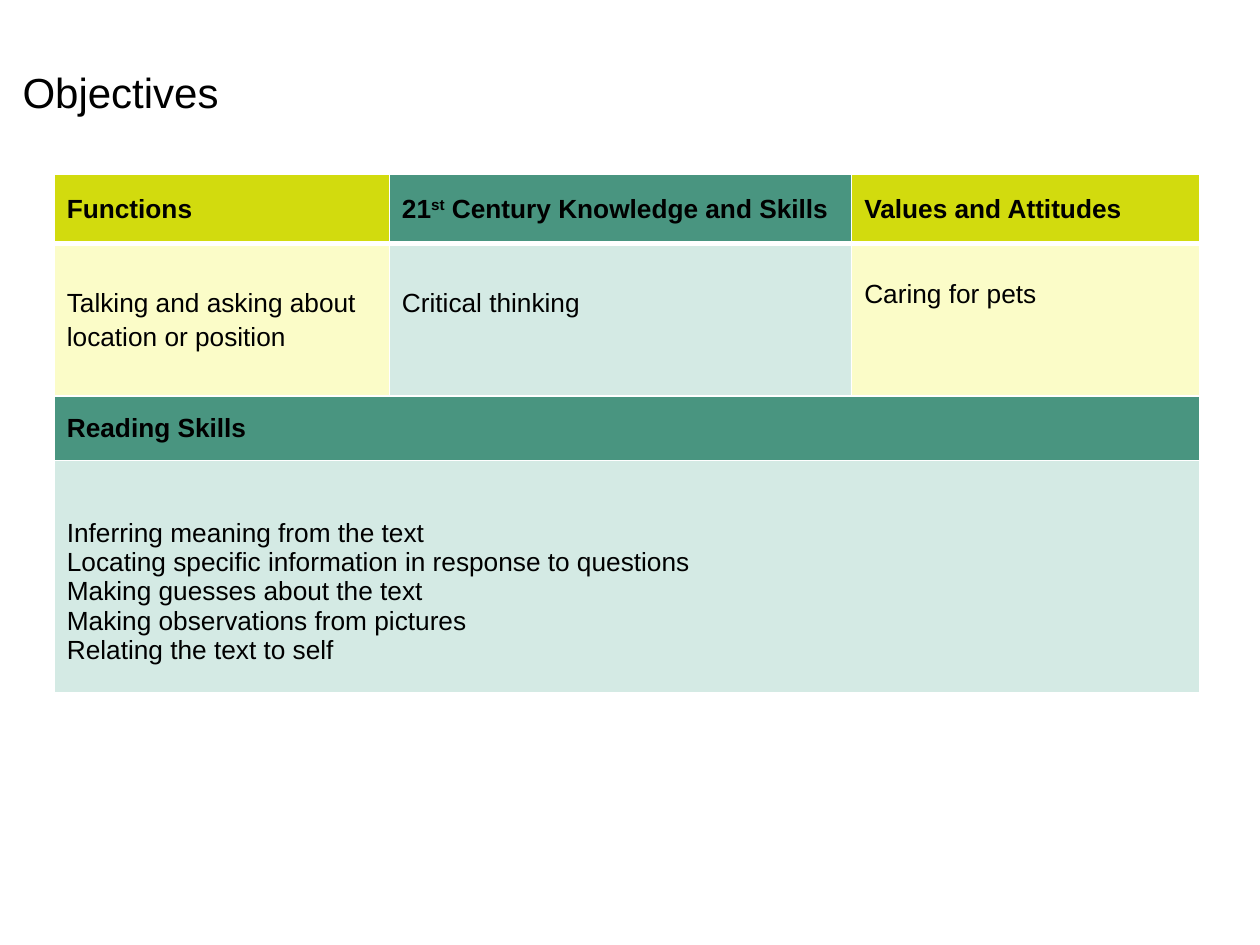
from lxml.etree import SubElement
from pptx import Presentation
from pptx.dml.color import RGBColor
from pptx.enum.text import MSO_ANCHOR
from pptx.oxml.ns import qn
from pptx.util import Pt

BLACK = RGBColor(0x00, 0x00, 0x00)
WHITE = RGBColor(0xFF, 0xFF, 0xFF)
LIME = RGBColor(0xD2, 0xDB, 0x0E)
PALE_LIME = RGBColor(0xFB, 0xFC, 0xC8)
GREEN = RGBColor(0x49, 0x95, 0x80)
PALE_GREEN = RGBColor(0xD4, 0xEA, 0xE4)

FONT_NAME = "Arial"
COLUMN_WIDTHS = (191.5, 264.2, 198.7)
ROW_HEIGHTS = (39.6, 87.1, 36.7, 133)
READING_SKILLS = (
    "Inferring meaning from the text",
    "Locating specific information in response to questions",
    "Making guesses about the text",
    "Making observations from pictures",
    "Relating the text to self",
)


def style_font(font, size, bold=False):
    font.name = FONT_NAME
    font.size = Pt(size)
    font.bold = bold
    font.color.rgb = BLACK


def add_title(slide, left, top, width, height):
    text_frame = slide.shapes.add_textbox(Pt(left), Pt(top), Pt(width), Pt(height)).text_frame
    text_frame.word_wrap = True
    text_frame.text = "Objectives"
    style_font(text_frame.paragraphs[0].runs[0].font, 24)


def set_borders(cell, top=1, bottom=1):
    properties = cell._tc.get_or_add_tcPr()
    for side, width in (("L", 1), ("R", 1), ("T", top), ("B", bottom)):
        line = SubElement(properties, qn(f"a:ln{side}"), w=str(Pt(width)))
        fill = SubElement(line, qn("a:solidFill"))
        SubElement(fill, qn("a:srgbClr"), val=str(WHITE))


def fill_cell(cell, paragraphs, color, bold=False, anchor=MSO_ANCHOR.MIDDLE,
              margin_top=3.6, line_spacing=None):
    """Each paragraph is a list of runs."""
    cell.vertical_anchor = anchor
    cell.margin_top = Pt(margin_top)
    cell.fill.solid()
    cell.fill.fore_color.rgb = color
    text_frame = cell.text_frame
    for index, runs in enumerate(paragraphs):
        paragraph = text_frame.add_paragraph() if index else text_frame.paragraphs[0]
        paragraph.line_spacing = line_spacing
        for text in runs:
            run = paragraph.add_run()
            run.text = text
            style_font(run.font, 15, bold)


def add_objectives_table(slide, left, top):
    table = slide.shapes.add_table(
        len(ROW_HEIGHTS), len(COLUMN_WIDTHS), Pt(left), Pt(top),
        Pt(sum(COLUMN_WIDTHS)), Pt(sum(ROW_HEIGHTS))).table
    for column, width in zip(table.columns, COLUMN_WIDTHS):
        column.width = Pt(width)
    for row, height in zip(table.rows, ROW_HEIGHTS):
        row.height = Pt(height)

    # White rules, thicker under the header row
    for row_index, row in enumerate(table.rows):
        for cell in row.cells:
            set_borders(cell, top=3 if row_index == 1 else 1,
                        bottom=3 if row_index == 0 else 1)

    # Three objective columns: header, text, colours, top margin, line spacing
    columns = (
        (["Functions"], "Talking and asking about location or position",
         LIME, PALE_LIME, 23.4, 1.15),
        (["21", "st", " Century Knowledge and Skills"], "Critical thinking",
         GREEN, PALE_GREEN, 23.4, 1.15),
        (["Values and Attitudes"], "Caring for pets", LIME, PALE_LIME, 20.8, None),
    )
    for index, (header, text, dark, pale, margin_top, spacing) in enumerate(columns):
        fill_cell(table.cell(0, index), [header], dark, bold=True)
        fill_cell(table.cell(1, index), [[text]], pale, anchor=MSO_ANCHOR.TOP,
                  margin_top=margin_top, line_spacing=spacing)
    ordinal = table.cell(0, 1).text_frame.paragraphs[0].runs[1]
    ordinal.font._element.set("baseline", "30000")

    # Reading skills across the full width
    for row_index in (2, 3):
        table.cell(row_index, 0).merge(table.cell(row_index, 2))
    fill_cell(table.cell(2, 0), [["Reading Skills"]], GREEN, bold=True)
    fill_cell(table.cell(3, 0), [[skill] for skill in READING_SKILLS],
              PALE_GREEN, margin_top=20.8)


def main():
    presentation = Presentation()
    presentation.slide_width = Pt(720)
    presentation.slide_height = Pt(540)
    slide = presentation.slides.add_slide(presentation.slide_layouts[6])
    add_title(slide, 5.8, 34.6, 127.4, 36.7)
    add_objectives_table(slide, 31, 99.7)
    presentation.save("out.pptx")


if __name__ == "__main__":
    main()
